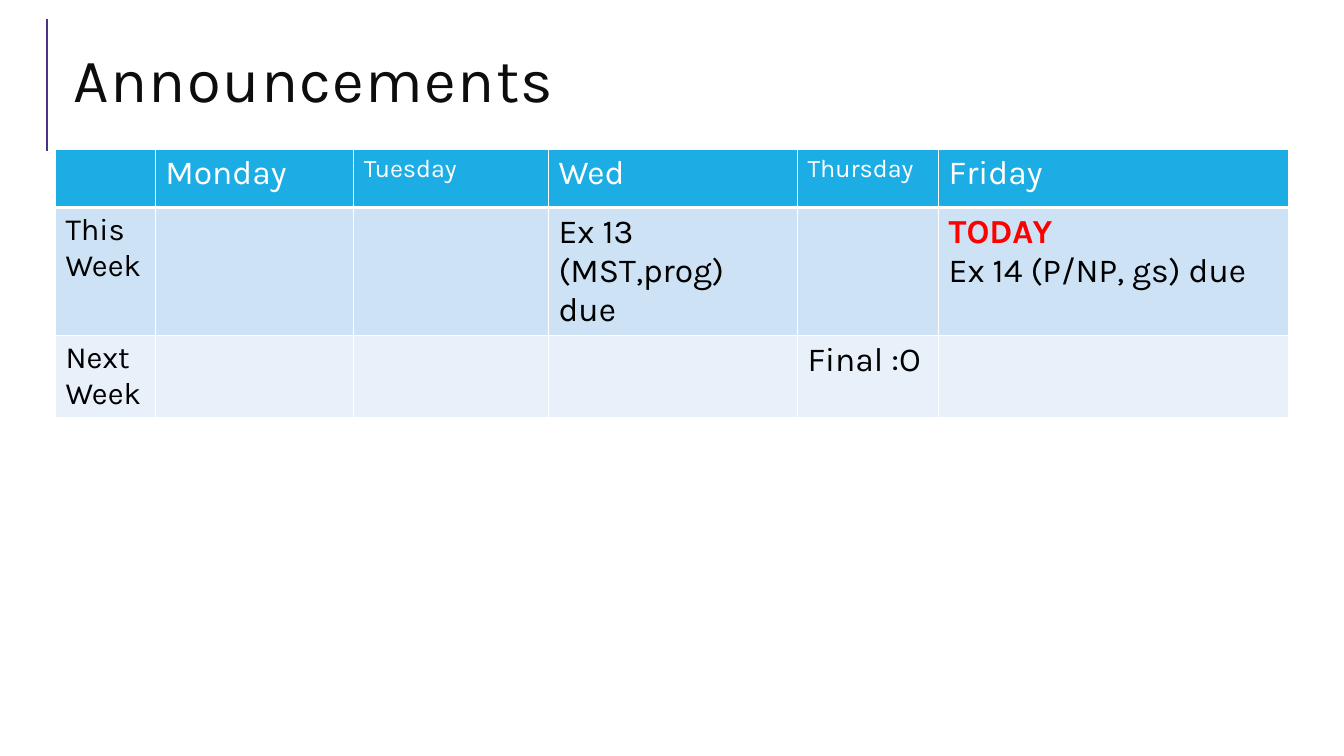
import pptx
import pptx.util
import pptx.dml.color
import pptx.enum.shapes
import pptx.enum.text
from lxml import etree
from pptx.oxml.ns import qn

RGB = pptx.dml.color.RGBColor
WHITE = RGB(0xFF, 0xFF, 0xFF)
BLACK = RGB(0x00, 0x00, 0x00)
INK = RGB(0x0D, 0x0D, 0x0D)
RED = RGB(0xFF, 0x00, 0x00)
PURPLE = RGB(0x4C, 0x32, 0x82)
HEADER_BLUE = RGB(0x1C, 0xAD, 0xE4)
BAND_BLUE = RGB(0xCD, 0xE3, 0xF5)
PALE_BLUE = RGB(0xE8, 0xF1, 0xFA)

FONT = "Karla"
PX_PER_INCH = 100

COLUMNS = [99, 197, 193, 247, 140, 347]
ROWS = [58, 105, 78]
ROW_FILLS = [HEADER_BLUE, BAND_BLUE, PALE_BLUE]
# Each cell is a list of lines: (text, size, colour, bold)
WEEKS = [
    [[],
     [("Monday", 24, WHITE, False)],
     [("Tuesday", 18, WHITE, False)],
     [("Wed", 24, WHITE, False)],
     [("Thursday", 18, WHITE, False)],
     [("Friday", 24, WHITE, False)]],
    [[("This Week", 22, BLACK, False)],
     [], [],
     [("Ex 13 (MST,prog) due", 24, BLACK, False)],
     [],
     [("TODAY", 24, RED, True), ("Ex 14 (P/NP, gs) due", 24, BLACK, False)]],
    [[("Next Week", 22, BLACK, False)],
     [], [], [],
     [("Final :O", 24, BLACK, False)],
     []],
]


def px(n):
    return pptx.util.Emu(n * 914400 // PX_PER_INCH)


def add_run(p, text, size, color, bold=False):
    r = p.add_run()
    r.text = text
    r.font.name = FONT
    r.font.size = pptx.util.Pt(size)
    r.font.color.rgb = color
    r.font.bold = bold
    return r


def set_borders(cell, bottom):
    """Draw white cell borders, 1 pt apart from the bottom one."""
    tcPr = cell._tc.get_or_add_tcPr()
    widths = {"a:lnL": 1, "a:lnR": 1, "a:lnT": 1, "a:lnB": bottom}
    for i, (tag, width) in enumerate(widths.items()):
        ln = etree.Element(qn(tag), w=str(pptx.util.Pt(width)))
        fill = etree.SubElement(ln, qn("a:solidFill"))
        etree.SubElement(fill, qn("a:srgbClr"), val=str(WHITE))
        tcPr.insert(i, ln)


def add_accent_line(s, x, y, height):
    line = s.shapes.add_connector(pptx.enum.shapes.MSO_CONNECTOR.STRAIGHT,
                                  px(x), px(y + height), px(x), px(y))
    line.line.color.rgb = PURPLE
    line.line.width = pptx.util.Pt(1.5)
    etree.SubElement(line._element.spPr, qn("a:effectLst"))


def add_title(s, x, y, width, height):
    add_accent_line(s, x - 16, y - 10, 131)
    sp = s.shapes.title
    sp.left, sp.top, sp.width, sp.height = px(x), px(y), px(width), px(height)
    tf = sp.text_frame
    tf.word_wrap = True
    tf.auto_size = pptx.enum.text.MSO_AUTO_SIZE.NONE
    tf.vertical_anchor = pptx.enum.text.MSO_ANCHOR.MIDDLE
    p = tf.paragraphs[0]
    p.alignment = pptx.enum.text.PP_ALIGN.LEFT
    p.line_spacing = 0.8
    r = add_run(p, "Announcements", 44, INK)
    r.font._element.set("spc", "100")


def add_schedule(s, x, y):
    table = s.shapes.add_table(len(ROWS), len(COLUMNS), px(x), px(y),
                               px(sum(COLUMNS)), px(sum(ROWS))).table
    for column, width in zip(table.columns, COLUMNS):
        column.width = px(width)
    for i, week in enumerate(WEEKS):
        table.rows[i].height = px(ROWS[i])
        for j, lines in enumerate(week):
            cell = table.cell(i, j)
            cell.fill.solid()
            cell.fill.fore_color.rgb = ROW_FILLS[i]
            set_borders(cell, bottom=3 if i == 0 else 1)
            p = cell.text_frame.paragraphs[0]
            for k, line in enumerate(lines):
                if k:
                    p.add_line_break()
                add_run(p, *line)


def main():
    prs = pptx.Presentation()
    prs.slide_width, prs.slide_height = px(1333), px(750)
    s = prs.slides.add_slide(prs.slide_layouts.get_by_name("Title Only"))
    s.background.fill.solid()
    s.background.fill.fore_color.rgb = WHITE
    add_title(s, 63, 29, 1223, 111)
    add_schedule(s, 55, 148)
    prs.save("out.pptx")


if __name__ == "__main__":
    main()
